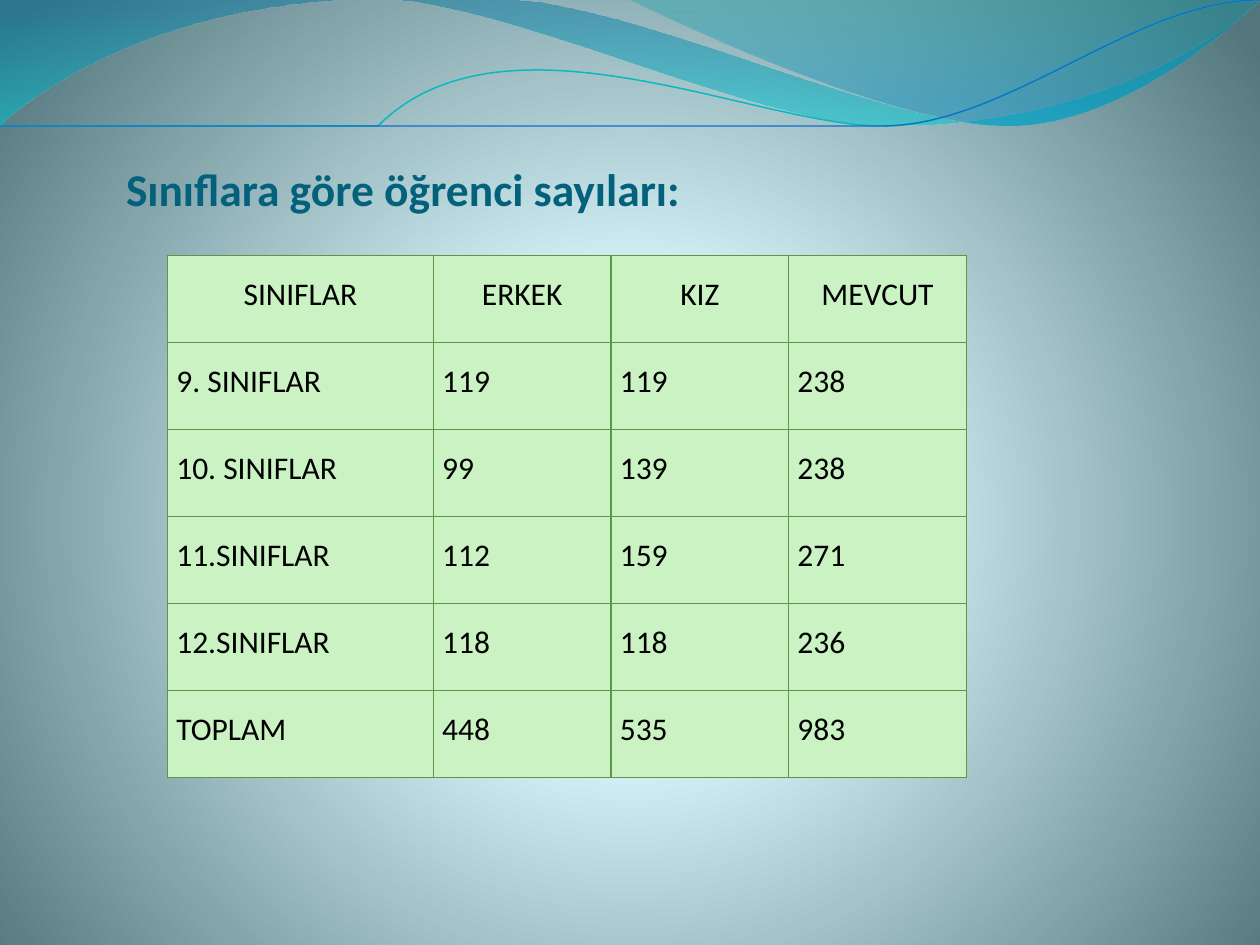
from lxml import etree
from pptx import Presentation
from pptx.dml.color import RGBColor
from pptx.enum.text import MSO_ANCHOR as Anchor, MSO_AUTO_SIZE as AutoSize, PP_ALIGN as Align
from pptx.oxml import parse_xml
from pptx.oxml.ns import nsdecls, qn
from pptx.util import Inches, Pt


def write_text(frame, text, size, color, bold=False, align=Align.LEFT, spacing=None):
    paragraph = frame.paragraphs[0]
    paragraph.alignment = align
    paragraph.line_spacing = spacing
    run = paragraph.add_run()
    run.text = text
    run.font.name = "Calibri"
    run.font.size = Pt(size)
    run.font.bold = bold
    run.font.color.rgb = RGBColor.from_string(color)


def gradient_fill(stops, shading):
    """Return a gradFill element; stops are (position, colour, opacity) in percent."""
    stop_xml = "".join(
        f'<a:gs pos="{pos * 1000}"><a:srgbClr val="{color}">'
        f'<a:alpha val="{opacity * 1000}"/></a:srgbClr></a:gs>'
        for pos, color, opacity in stops)
    return parse_xml(f'<a:gradFill {nsdecls("a")} rotWithShape="1">'
                     f'<a:gsLst>{stop_xml}</a:gsLst>{shading}</a:gradFill>')


prs = Presentation()
prs.slide_width, prs.slide_height = Inches(10), Inches(7.5)
slide = prs.slides.add_slide(prs.slide_layouts[5])

# Background
background = slide.background.fill
background.solid()
backdrop = slide._element.find(".//" + qn("p:bgPr"))
backdrop.replace(backdrop.find(qn("a:solidFill")), gradient_fill(
    [(0, "DEFBFF", 100), (25, "DDFAFF", 100), (100, "52767C", 100)],
    '<a:path path="circle"><a:fillToRect l="10000" t="110000" r="10000" b="100000"/></a:path>'))

# Waves: start point, then segments of one point (line) or three points (curve)
DOWNWARD = '<a:lin ang="5400000" scaled="0"/>'
waves = [
    {"start": (0, 0),
     "segments": [[(4.4, -0.01)],
                  [(4.76, 0.17), (6.64, 0.63), (7.58, 0.63)],
                  [(8.53, 0.63), (9.58, 0.26), (10, 0.09)],
                  [(10.01, 0.36)],
                  [(9.83, 0.44), (8.7, 0.76), (7.46, 0.75)],
                  [(6.22, 0.75), (3.82, 0.28), (2.57, 0.34)],
                  [(1.29, 0.36), (0.46, 0.83), (-0.01, 1.13)]],
     "stops": [(0, "0074A1", 45), (100, "00C6CF", 55)]},
    {"start": (4.79, -0.01),
     "segments": [[(5.09, 0.11), (6.82, 0.62), (7.69, 0.65)],
                  [(8.56, 0.69), (9.61, 0.32), (10, 0.21)],
                  [(10, 0)]],
     "stops": [(0, "00A1A9", 30), (80, "008BBF", 45)]},
    {"start": (0, 1.11),
     "segments": [[(0.48, 0.93), (1.58, 0.57), (2.77, 0.52)],
                  [(3.95, 0.47), (5.93, 0.89), (7.13, 0.8)],
                  [(8.33, 0.71), (9.38, 0.15), (9.98, -0.02)]],
     "line": ("0AB8BF", 0.85)},
    {"start": (0, 1.04),
     "segments": [[(0.47, 0.96), (1.64, 0.61), (2.83, 0.56)],
                  [(4.03, 0.51), (5.97, 0.84), (7.17, 0.75)],
                  [(8.36, 0.67), (9.41, 0.21), (10, 0.06)]],
     "line": ("0F6FC6", 0.75)},
]
for wave in waves:
    builder = slide.shapes.build_freeform(*wave["start"], scale=Inches(1))
    builder.add_line_segments([point for segment in wave["segments"] for point in segment],
                              close="stops" in wave)
    shape = builder.convert_to_shape()
    shape.shadow.inherit = False

    # Turn each run of three line points into one Bézier curve
    outline = shape._element.find(".//" + qn("a:path"))
    steps = iter(outline.findall(qn("a:lnTo")))
    for segment in wave["segments"]:
        members = [next(steps) for _ in segment]
        if len(members) == 3:
            curve = etree.Element(qn("a:cubicBezTo"))
            members[0].addprevious(curve)
            for member in members:
                curve.append(member[0])
                outline.remove(member)

    if "stops" in wave:
        shape.line.fill.background()
        shape.fill.solid()
        properties = shape._element.spPr
        properties.replace(properties.find(qn("a:solidFill")),
                           gradient_fill(wave["stops"], DOWNWARD))
    else:
        color, width = wave["line"]
        shape.fill.background()
        shape.line.color.rgb = RGBColor.from_string(color)
        shape.line.width = Pt(width)

# Title, brought in front of the waves
title = slide.shapes.title
slide.shapes._spTree.append(title._element)
title.left, title.top, title.width, title.height = (Inches(v) for v in (1, 1.17, 7.13, 0.54))
heading = title.text_frame
heading.auto_size = AutoSize.NONE
heading.vertical_anchor = Anchor.BOTTOM
heading.margin_left = heading.margin_right = heading.margin_bottom = 0
heading.margin_top = Inches(0.05)
write_text(heading, "Sınıflara göre öğrenci sayıları:", size=26, color="04617B", bold=True)

# Student numbers
students = [
    ("SINIFLAR", "ERKEK", "KIZ", "MEVCUT"),
    ("9. SINIFLAR", "119", "119", "238"),
    ("10. SINIFLAR", "99", "139", "238"),
    ("11.SINIFLAR", "112", "159", "271"),
    ("12.SINIFLAR", "118", "118", "236"),
    ("TOPLAM", "448", "535", "983"),
]
table = slide.shapes.add_table(len(students), 4, Inches(1.33), Inches(2.03),
                               Inches(6.33), Inches(4.14)).table
for column, width in zip(table.columns, (2.11, 1.41, 1.41, 1.41)):
    column.width = Inches(width)

for r, row in enumerate(students):
    for c, text in enumerate(row):
        cell = table.cell(r, c)
        cell.vertical_anchor = Anchor.MIDDLE
        cell.margin_left = cell.margin_right = Inches(0.07)
        cell.margin_top = cell.margin_bottom = 0
        write_text(cell.text_frame, text, size=18, color="000000", spacing=Pt(16.8),
                   align=Align.CENTER if r == 0 else Align.LEFT)
        cell.fill.solid()
        cell.fill.fore_color.rgb = RGBColor.from_string("CBF2C3")
        for i, side in enumerate(("lnL", "lnR", "lnT", "lnB")):
            cell._tc.tcPr.insert(i, parse_xml(
                f'<a:{side} {nsdecls("a")} w="{Pt(0.75)}"><a:solidFill>'
                f'<a:srgbClr val="5B9747"/></a:solidFill></a:{side}>'))

prs.save("out.pptx")
